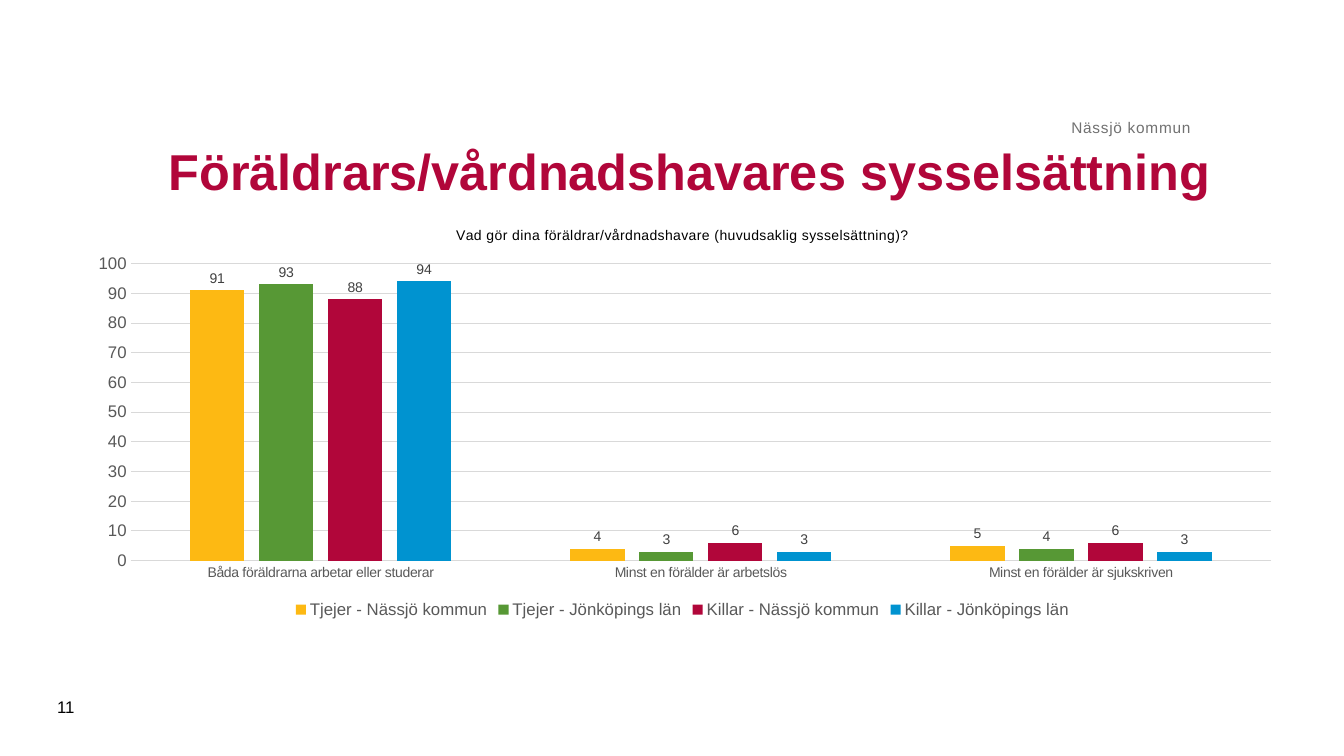
"""Build a slide with a clustered column chart of parents' occupation."""
from lxml import etree
from pptx import Presentation
from pptx.chart.data import CategoryChartData
from pptx.dml.color import RGBColor
from pptx.enum.chart import XL_CHART_TYPE, XL_LABEL_POSITION, XL_LEGEND_POSITION, XL_TICK_MARK
from pptx.enum.text import MSO_ANCHOR, MSO_AUTO_SIZE, PP_ALIGN
from pptx.oxml import parse_xml
from pptx.oxml.ns import nsdecls, qn
from pptx.util import Pt

PX = 9525
FONT = "Arial"
COLUMNS = XL_CHART_TYPE.COLUMN_CLUSTERED
OUTSIDE_END = XL_LABEL_POSITION.OUTSIDE_END
BOTTOM_LEGEND = XL_LEGEND_POSITION.BOTTOM
NO_TICK = XL_TICK_MARK.NONE
MIDDLE, BOTTOM = MSO_ANCHOR.MIDDLE, MSO_ANCHOR.BOTTOM
LEFT, RIGHT = PP_ALIGN.LEFT, PP_ALIGN.RIGHT
NO_AUTOFIT = MSO_AUTO_SIZE.NONE

BLACK = RGBColor(0x00, 0x00, 0x00)
LABEL_GREY = RGBColor(0x40, 0x40, 0x40)
AXIS_GREY = RGBColor(0x59, 0x59, 0x59)
PLACE_GREY = RGBColor(0x71, 0x71, 0x71)
GRID_GREY = RGBColor(0xD9, 0xD9, 0xD9)
YELLOW = RGBColor(0xFD, 0xB9, 0x13)
GREEN = RGBColor(0x57, 0x98, 0x35)
CRIMSON = RGBColor(0xB1, 0x06, 0x3A)
BLUE = RGBColor(0x00, 0x93, 0xD0)

NUMBER_FORMAT = "#,##0;#,##0"
QUESTION = "Vad gör dina föräldrar/vårdnadshavare (huvudsaklig sysselsättning)?"
SITUATIONS = (
    "Båda föräldrarna arbetar eller studerar",
    "Minst en förälder är arbetslös",
    "Minst en förälder är sjukskriven",
)
GROUPS = (
    ("Tjejer - Nässjö kommun", (91, 4, 5), YELLOW),
    ("Tjejer - Jönköpings län", (93, 3, 4), GREEN),
    ("Killar - Nässjö kommun", (88, 6, 6), CRIMSON),
    ("Killar - Jönköpings län", (94, 3, 3), BLUE),
)
PLOT_AREA = {"x": 0.05, "y": 0.13, "w": 0.93, "h": 0.72}


def emu(*lengths):
    """Turn px lengths into EMU."""
    return [length * PX for length in lengths]


def style_font(font, size, color, bold=False):
    """Set face, size, colour and weight of a font."""
    font.name = FONT
    font.size = Pt(size)
    font.bold = bold
    font.color.rgb = color


def fill_text(holder, text, size, color, align=LEFT, anchor=MIDDLE, bold=False):
    """Write one styled paragraph into a shape and return its run."""
    frame = holder.text_frame
    frame.text = text
    frame.word_wrap = True
    frame.auto_size = NO_AUTOFIT
    frame.vertical_anchor = anchor
    paragraph = frame.paragraphs[0]
    paragraph.alignment = align
    run = paragraph.runs[0]
    style_font(run.font, size, color, bold)
    return run


def add_heading(slide, text):
    """Place and format the title placeholder."""
    heading = slide.shapes.title
    heading.left, heading.top, heading.width, heading.height = emu(151, 94, 1047, 136)
    fill_text(heading, text, 36, CRIMSON, bold=True)


def add_place(slide, text):
    """Add the municipality name above the heading."""
    place = slide.shapes.add_textbox(*emu(151, 60, 983, 70))
    frame = place.text_frame
    frame.margin_left = frame.margin_right = frame.margin_top = frame.margin_bottom = 0
    run = fill_text(place, text, 11, PLACE_GREY, RIGHT, BOTTOM)
    run.font._element.set("spc", "50")


def add_page_number(slide, text):
    """Add the page number in the lower left corner."""
    page_number = slide.shapes.add_textbox(*emu(45, 654, 55, 38))
    fill_text(page_number, text, 12, BLACK)


def style_line(line):
    """Give an axis or grid line its thin grey stroke."""
    line.color.rgb = GRID_GREY
    line.width = Pt(0.75)


def set_plot_area(chart):
    """Fix the inner plot area as fractions of the chart."""
    plot_area = chart._chartSpace.find(".//" + qn("c:plotArea"))
    for old_layout in plot_area.findall(qn("c:layout")):
        plot_area.remove(old_layout)
    layout = parse_xml(f"<c:layout {nsdecls('c')}><c:manualLayout/></c:layout>")
    settings = {"layoutTarget": "inner", "xMode": "edge", "yMode": "edge", **PLOT_AREA}
    for tag, value in settings.items():
        etree.SubElement(layout[0], qn(f"c:{tag}")).set("val", str(value))
    plot_area.insert(0, layout)


def style_axes(chart):
    """Format the category and value axes."""
    situations = chart.category_axis
    situations.major_tick_mark = situations.minor_tick_mark = NO_TICK
    style_font(situations.tick_labels.font, 10, AXIS_GREY)
    situations.tick_labels.font._element.set("spc", "-10")
    style_line(situations.format.line)

    percent = chart.value_axis
    percent.minimum_scale, percent.maximum_scale, percent.major_unit = 0, 100, 10
    percent.major_tick_mark = percent.minor_tick_mark = NO_TICK
    percent.tick_labels.number_format = NUMBER_FORMAT
    percent.tick_labels.number_format_is_linked = False
    style_font(percent.tick_labels.font, 12, AXIS_GREY)
    percent.format.line.fill.background()
    percent.has_major_gridlines = True
    style_line(percent.major_gridlines.format.line)


def style_columns(plot):
    """Colour the columns and show their values."""
    plot.gap_width = 219
    plot.overlap = -27
    plot.vary_by_categories = False
    for group, (_, _, color) in zip(plot.series, GROUPS):
        group.format.fill.solid()
        group.format.fill.fore_color.rgb = color
        labels = group.data_labels
        labels.show_value = True
        labels.position = OUTSIDE_END
        labels.number_format = NUMBER_FORMAT
        labels.number_format_is_linked = False
        style_font(labels.font, 10, LABEL_GREY)


def add_occupation_chart(slide):
    """Add the column chart with its question and legend."""
    answers = CategoryChartData(number_format=NUMBER_FORMAT)
    answers.categories = SITUATIONS
    for name, shares, _ in GROUPS:
        answers.add_series(name, shares)
    chart = slide.shapes.add_chart(COLUMNS, *emu(66, 200, 1168, 393), answers).chart
    style_font(chart.font, 10, BLACK)
    chart.has_title = True
    question = chart.chart_title.text_frame
    question.text = QUESTION
    question_font = question.paragraphs[0].runs[0].font
    style_font(question_font, 10, BLACK)
    question_font._element.set("spc", "40")
    chart.chart_title.include_in_layout = False
    chart.has_legend = True
    chart.legend.position = BOTTOM_LEGEND
    chart.legend.include_in_layout = False
    style_font(chart.legend.font, 12, AXIS_GREY)
    set_plot_area(chart)
    style_axes(chart)
    style_columns(chart.plots[0])


def main():
    """Build and save the slide."""
    deck = Presentation()
    deck.slide_width, deck.slide_height = emu(1280, 720)
    slide = deck.slides.add_slide(deck.slide_layouts[5])
    add_heading(slide, "Föräldrars/vårdnadshavares sysselsättning")
    add_place(slide, "Nässjö kommun")
    add_page_number(slide, "11")
    add_occupation_chart(slide)
    deck.save("out.pptx")


if __name__ == "__main__":
    main()
